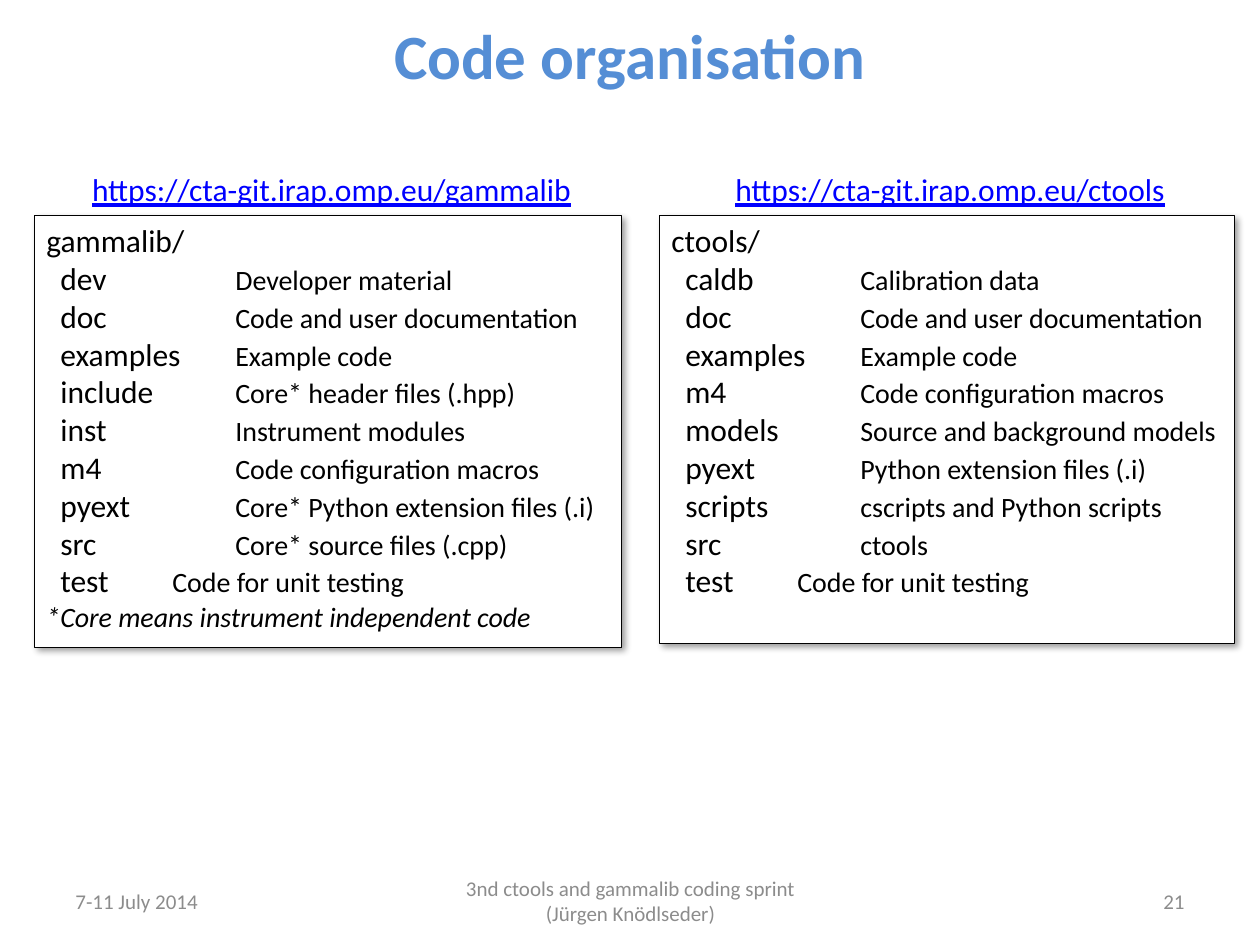
"""Build the code organisation slide: two directory listings with their repository addresses."""
import pptx
import pptx.dml.color
import pptx.enum.shapes
import pptx.enum.text
import pptx.oxml
import pptx.oxml.ns
import pptx.util

COLORS = {"title": "558ED5", "link": "0000FF", "text": "000000", "footer": "8C8C8C", "box": "FFFFFF"}
FONT = "Calibri"
EMU_PER_PX = 914400 // 126
INDENT = 14

TITLE = ("Code organisation", (63, 3, 1134, 102))
FOOTERS = [
    ("7-11 July 2014", (63, 876, 294, 50), "LEFT"),
    ("3nd ctools and gammalib coding sprint (Jürgen Knödlseder)", (431, 876, 399, 50), "CENTER"),
    ("21", (903, 876, 294, 50), "RIGHT"),
]
LISTINGS = [
    {
        "link": "https://cta-git.irap.omp.eu/gammalib",
        "link_at": (75, 164, 513, 50),
        "box_at": (34, 215, 587, 432),
        "root": "gammalib/",
        "entries": [
            ("dev", 3, "Developer material"),
            ("doc", 3, "Code and user documentation"),
            ("examples", 1, "Example code"),
            ("include", 2, "Core* header files (.hpp)"),
            ("inst", 3, "Instrument modules"),
            ("m4", 3, "Code configuration macros"),
            ("pyext", 2, "Core* Python extension files (.i)"),
            ("src", 3, "Core* source files (.cpp)"),
            ("test", 2, "Code for unit testing"),
        ],
        "note": "*Core means instrument independent code",
    },
    {
        "link": "https://cta-git.irap.omp.eu/ctools",
        "link_at": (719, 164, 462, 50),
        "box_at": (659, 215, 575, 428),
        "root": "ctools/",
        "entries": [
            ("caldb", 2, "Calibration data"),
            ("doc", 3, "Code and user documentation"),
            ("examples", 1, "Example code"),
            ("m4", 3, "Code configuration macros"),
            ("models", 2, "Source and background models"),
            ("pyext", 2, "Python extension files (.i)"),
            ("scripts", 2, "cscripts and Python scripts"),
            ("src", 3, "ctools"),
            ("test", 2, "Code for unit testing"),
        ],
        "note": None,
    },
]


def px(n):
    return pptx.util.Emu(n * EMU_PER_PX)


def rgb(name):
    return pptx.dml.color.RGBColor.from_string(COLORS[name])


def add_run(p, text, size=18, color="text", bold=False, italic=False, underline=False):
    r = p.add_run()
    r.text = text
    f = r.font
    f.name, f.size, f.bold, f.italic, f.underline = FONT, pptx.util.Pt(size), bold, italic, underline
    f.color.rgb = rgb(color)


def add_label(s, text, at, align="CENTER", anchor="MIDDLE", wrap=True, **fmt):
    tf = s.shapes.add_textbox(*map(px, at)).text_frame
    tf.word_wrap = wrap
    tf.vertical_anchor = pptx.enum.text.MSO_ANCHOR[anchor]
    p = tf.paragraphs[0]
    p.alignment = pptx.enum.text.PP_ALIGN[align]
    add_run(p, text, **fmt)


def add_shadow(sp):
    ns = pptx.oxml.ns.nsdecls("a")
    blur, dist, angle = pptx.util.Pt(4), pptx.util.Pt(3), 45 * 60000
    sp._element.spPr.append(pptx.oxml.parse_xml(
        f'<a:effectLst {ns}><a:outerShdw blurRad="{blur}" dist="{dist}" dir="{angle}" algn="tl" '
        f'rotWithShape="0"><a:srgbClr val="{COLORS["text"]}"><a:alpha val="40000"/></a:srgbClr>'
        f'</a:outerShdw></a:effectLst>'))


def indent_first_line(p):
    ppr = p._p.get_or_add_pPr()
    ppr.set("marL", "0")
    ppr.set("indent", str(px(INDENT)))


def add_listing(s, item):
    sp = s.shapes.add_shape(pptx.enum.shapes.MSO_SHAPE.RECTANGLE, *map(px, item["box_at"]))
    sp.fill.solid()
    sp.fill.fore_color.rgb = rgb("box")
    sp.line.color.rgb = rgb("text")
    sp.line.width = pptx.util.Pt(0.25)
    add_shadow(sp)
    tf = sp.text_frame
    tf.word_wrap = True
    tf.vertical_anchor = pptx.enum.text.MSO_ANCHOR.TOP
    add_run(tf.paragraphs[0], item["root"])
    for name, tabs, description in item["entries"]:
        p = tf.add_paragraph()
        indent_first_line(p)
        add_run(p, name + "\t" * tabs)
        add_run(p, description, size=16)
    if item["note"]:
        add_run(tf.add_paragraph(), item["note"], size=16, italic=True)
    for p in tf.paragraphs:
        p.alignment = pptx.enum.text.PP_ALIGN.LEFT


def main():
    prs = pptx.Presentation()
    prs.slide_width, prs.slide_height = px(1260), px(945)
    s = prs.slides.add_slide(prs.slide_layouts[6])
    for text, at, align in FOOTERS:
        add_label(s, text, at, align=align, size=12, color="footer")
    add_label(s, *TITLE, size=36, color="title", bold=True)
    for item in LISTINGS:
        add_label(s, item["link"], item["link_at"], anchor="TOP", wrap=False, color="link", underline=True)
        add_listing(s, item)
    prs.save("out.pptx")


if __name__ == "__main__":
    main()
